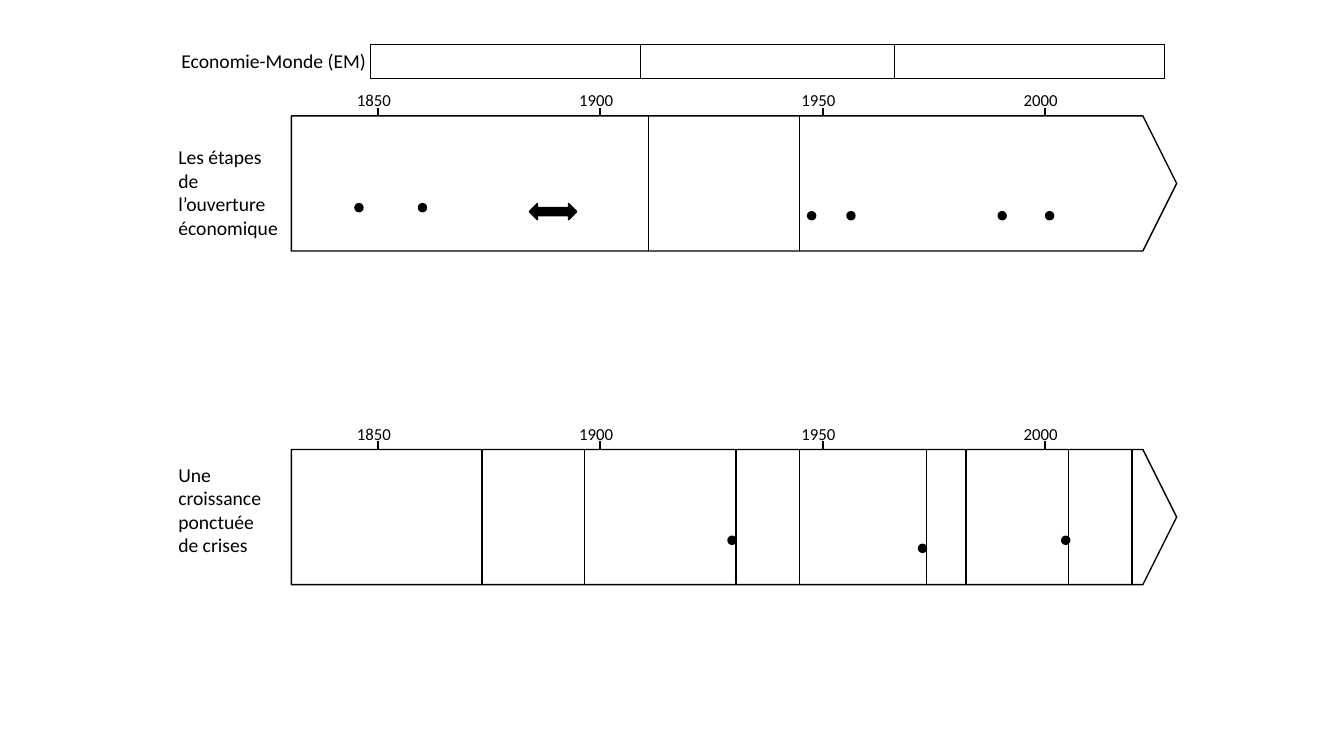
import pptx
import pptx.util
import pptx.dml.color
import pptx.enum.shapes
import pptx.enum.text
import pptx.oxml
from dataclasses import dataclass

Inches = pptx.util.Inches
Pt = pptx.util.Pt
Shape = pptx.enum.shapes.MSO_SHAPE
Align = pptx.enum.text.PP_ALIGN


@dataclass(frozen=True)
class Theme:
    ink: pptx.dml.color.RGBColor = pptx.dml.color.RGBColor(0, 0, 0)
    font: str = "Calibri"
    label_size: int = 14
    year_size: int = 12
    thin: float = 0.5
    box: float = 0.75
    outline: float = 1
    tick: float = 1.5


theme = Theme()


def add_figure(group, kind, left, top, width, height, filled=False, weight=theme.outline):
    shape = group.shapes.add_shape(kind, Inches(left), Inches(top), Inches(width), Inches(height))
    shape.shadow.inherit = False
    if filled:
        shape.fill.solid()
        shape.fill.fore_color.rgb = theme.ink
    else:
        shape.fill.background()
    shape.line.color.rgb = theme.ink
    shape.line.width = Pt(weight)
    return shape


def add_label(group, text, left, top, width, height, size, align=Align.LEFT):
    box = group.shapes.add_textbox(Inches(left), Inches(top), Inches(width), Inches(height))
    box.text_frame.word_wrap = True
    box.text_frame.auto_size = pptx.enum.text.MSO_AUTO_SIZE.SHAPE_TO_FIT_TEXT
    paragraph = box.text_frame.paragraphs[0]
    paragraph.alignment = align
    run = paragraph.add_run()
    run.text = text
    run.font.name = theme.font
    run.font.size = Pt(size)
    run.font.color.rgb = theme.ink


presentation = pptx.Presentation()
presentation.slide_width = Inches(13.33)
presentation.slide_height = Inches(7.5)
slide = presentation.slides.add_slide(presentation.slide_layouts[6])

band_left, band_width, band_height = 2.89, 8.78, 1.34
first_tick, tick_gap, tick_height = 3.75, 2.205, 0.08
dot_size = 0.08
years = ["1850", "1900", "1950", "2000"]

# Each timeline: label box, dividing lines, periods (left, width), dots (left, top)
timelines = [
    {
        "top": 1.15,
        "label": ("Les étapes de l’ouverture économique", 1.67, 1.39, 1.22, 1.04),
        "dividers": [6.43, 7.93],
        "periods": [],
        "dots": [(3.52, 2.02), (4.15, 2.02), (8.01, 2.1), (8.4, 2.1), (9.9, 2.1), (10.37, 2.1)],
    },
    {
        "top": 4.46,
        "label": ("Une croissance ponctuée de crises", 1.67, 4.54, 1.06, 1.04),
        "dividers": [],
        "periods": [(4.78, 1.02), (7.3, 0.63), (9.19, 0.39), (10.6, 0.63)],
        "dots": [(7.22, 5.32), (9.11, 5.4), (10.53, 5.32)],
    },
]

groups = []
for timeline in timelines:
    top = timeline["top"]
    group = slide.shapes.add_group_shape()
    groups.append(group)

    band = add_figure(group, Shape.PENTAGON, band_left, top, band_width, band_height)
    band.adjustments[0] = 0.25
    for left, width in timeline["periods"]:
        add_figure(group, Shape.RECTANGLE, left, top, width, band_height)

    lines = [(x, top, top + band_height, theme.thin) for x in timeline["dividers"]]
    for index, year in enumerate(years):
        tick_x = first_tick + index * tick_gap
        add_label(group, year, tick_x - 0.31, top - 0.31, 0.71, 0.3, theme.year_size)
        lines.append((tick_x, top - tick_height, top, theme.tick))
    for x, start, end, weight in lines:
        connector = group.shapes.add_connector(
            pptx.enum.shapes.MSO_CONNECTOR.STRAIGHT, Inches(x), Inches(start), Inches(x), Inches(end))
        connector.line.color.rgb = theme.ink
        connector.line.width = Pt(weight)
        connector._element.spPr.append(pptx.oxml.parse_xml(
            '<a:effectLst xmlns:a="http://schemas.openxmlformats.org/drawingml/2006/main"/>'))

    add_label(group, *timeline["label"], theme.label_size)
    for left, dot_top in timeline["dots"]:
        add_figure(group, Shape.OVAL, left, dot_top, dot_size, dot_size, filled=True)

# The world-economy row and the double arrow belong to the first timeline
opening = groups[0]
add_label(opening, "Economie-Monde (EM)", 1.67, 0.44, 2.09, 0.34, theme.label_size, Align.CENTER)
for left, width in [(3.67, 2.68), (6.35, 2.52), (8.87, 2.68)]:
    add_figure(opening, Shape.RECTANGLE, left, 0.44, width, 0.34, weight=theme.box)
add_figure(opening, Shape.LEFT_RIGHT_ARROW, 5.25, 2.02, 0.47, 0.16, filled=True)

presentation.save("out.pptx")
